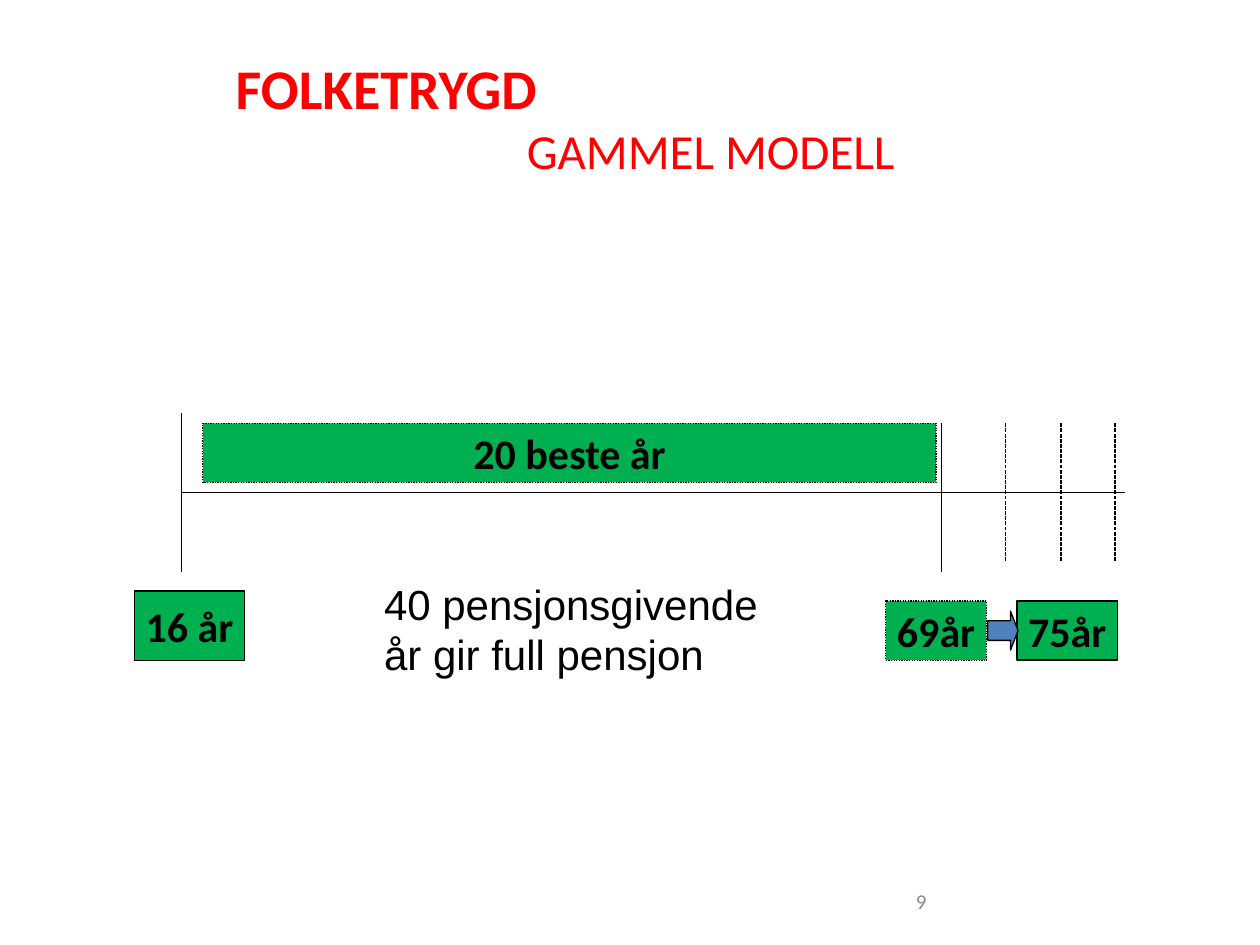
import lxml.etree
import pptx
import pptx.dml.color
import pptx.enum.dml
import pptx.enum.shapes
import pptx.enum.text
import pptx.oxml.ns
import pptx.util

Inches = pptx.util.Inches
Pt = pptx.util.Pt
Align = pptx.enum.text.PP_ALIGN
Anchor = pptx.enum.text.MSO_ANCHOR
Dash = pptx.enum.dml.MSO_LINE
Shape = pptx.enum.shapes.MSO_SHAPE

COLORS = {
    "red": "FF0000",
    "green": "00B050",
    "blue": "4F81BD",
    "gray": "898989",
    "black": "000000",
}


def color(name):
    return pptx.dml.color.RGBColor.from_string(COLORS[name])


def apply(target, values):
    """Set each attribute named in values on target."""
    for name, value in values.items():
        setattr(target, name, value)


class Board:
    """Holds the current slide and the style of its elements."""

    label = {"name": "Calibri", "size": Pt(24), "bold": True}
    frame = {"margin_left": Inches(0.1), "margin_right": Inches(0.1),
             "margin_top": Inches(0.05), "margin_bottom": Inches(0.05)}

    def __init__(self, slide):
        self.slide = slide

    def words(self, par, text, font, tint, align):
        par.alignment = align
        run = par.add_run()
        run.text = text
        apply(run.font, font)
        run.font.color.rgb = color(tint)

    def stroke(self, line, width, dash):
        line.color.rgb = color("black")
        line.width = Pt(width)
        if dash:
            line.dash_style = dash

    def title(self, rows, box):
        """Fill the title with rows of (text, size, bold, alignment)."""
        shape = self.slide.shapes.title
        apply(shape, dict(zip(("left", "top", "width", "height"), map(Inches, box))))
        frame = shape.text_frame
        apply(frame, {**self.frame, "word_wrap": True, "vertical_anchor": Anchor.MIDDLE})
        for i, (text, size, bold, align) in enumerate(rows):
            par = frame.add_paragraph() if i else frame.paragraphs[0]
            par.space_before = Pt(0)
            font = {"name": "Calibri", "size": Pt(size), "bold": bold}
            self.words(par, text, font, "red", align)

    def text(self, text, box, name, size, tint, anchor):
        frame = self.slide.shapes.add_textbox(*map(Inches, box)).text_frame
        apply(frame, {**self.frame, "word_wrap": True, "vertical_anchor": anchor})
        font = {"name": name, "size": Pt(size)}
        self.words(frame.paragraphs[0], text, font, tint, Align.LEFT)

    def shape(self, kind, box, fill, width=0.75, dash=None):
        shape = self.slide.shapes.add_shape(kind, *map(Inches, box))
        shape.shadow.inherit = False
        shape.fill.solid()
        shape.fill.fore_color.rgb = color(fill)
        self.stroke(shape.line, width, dash)
        return shape

    def block(self, text, box, width=0.75, dash=None):
        frame = self.shape(Shape.RECTANGLE, box, "green", width, dash).text_frame
        apply(frame, {**self.frame, "word_wrap": False, "vertical_anchor": Anchor.MIDDLE})
        self.words(frame.paragraphs[0], text, self.label, "black", Align.CENTER)

    def arrow(self, box):
        shape = self.shape(Shape.RIGHT_ARROW, box, "blue")
        shape.adjustments[0], shape.adjustments[1] = 0.5, 0.25

    def line(self, start, end, dash=None):
        kind = pptx.enum.shapes.MSO_CONNECTOR.STRAIGHT
        line = self.slide.shapes.add_connector(kind, *map(Inches, start + end))
        self.stroke(line.line, 0.75, dash)
        lxml.etree.SubElement(line._element.spPr, pptx.oxml.ns.qn("a:effectLst"))


def main():
    deck = pptx.Presentation()
    deck.slide_width, deck.slide_height = Inches(10), Inches(7.5)
    board = Board(deck.slides.add_slide(deck.slide_layouts[5]))

    board.title([("FOLKETRYGD", 32, True, Align.LEFT),
                 ("GAMMEL MODELL", 28, False, Align.CENTER)],
                (1.77, 0.3, 7.74, 1.25))
    board.text("9", (7.17, 6.95, 2.33, 0.4), "Calibri", 12, "gray", Anchor.MIDDLE)

    # Time axis, its start and end marks, and the later years
    top, foot = 3.36, 4.54
    board.line((1.44, 3.91), (8.93, 3.91))
    board.line((1.44, 3.28), (1.44, foot))
    board.line((7.47, top), (7.47, foot))
    for x in (7.98, 8.42, 8.85):
        board.line((x, top), (x, 4.46), Dash.SQUARE_DOT)

    board.block("16 år", (1.07, 4.69, 0.87, 0.55))
    board.block("69år", (7.03, 4.77, 0.8, 0.47), dash=Dash.ROUND_DOT)
    board.text("40 pensjonsgivende år gir full pensjon",
               (2.95, 4.54, 3.23, 0.9), "Arial", 24, "black", Anchor.TOP)
    board.block("75år", (8.07, 4.77, 0.8, 0.47), width=1)
    board.arrow((7.84, 4.85, 0.24, 0.31))
    board.block("20 beste år", (1.61, top, 5.82, 0.47), dash=Dash.ROUND_DOT)

    deck.save("out.pptx")


if __name__ == "__main__":
    main()
